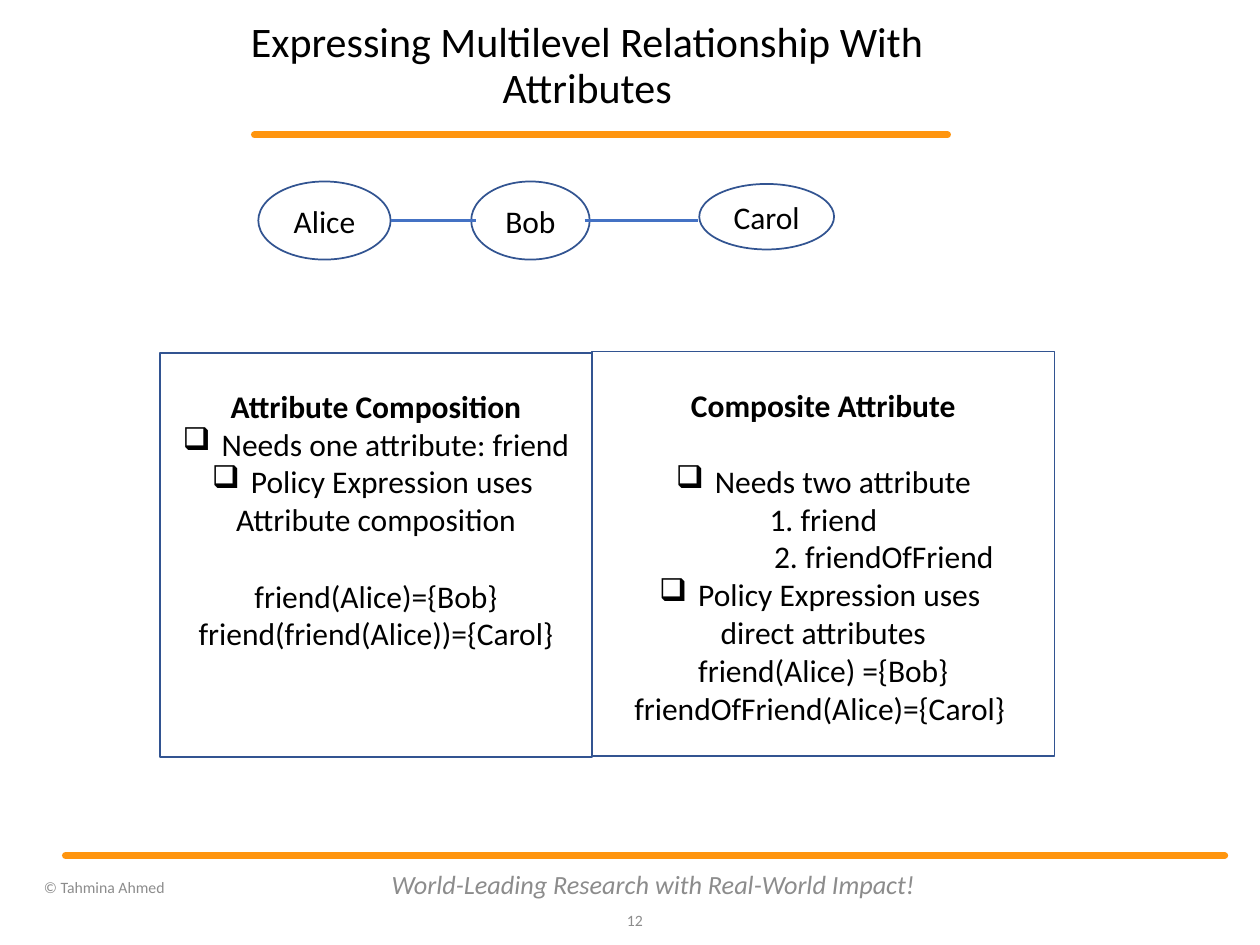
from dataclasses import dataclass
from typing import NamedTuple

from lxml.etree import SubElement
from pptx import Presentation
from pptx.dml.color import RGBColor
from pptx.enum.shapes import MSO_CONNECTOR as Connector, MSO_SHAPE as Shape
from pptx.enum.text import MSO_ANCHOR as Anchor, PP_ALIGN as Align
from pptx.oxml.ns import qn
from pptx.util import Emu, Pt

EMU_PER_PX = 9144


def px(length: int) -> Emu:
    return Emu(length * EMU_PER_PX)


@dataclass(frozen=True)
class Theme:
    font: str = "Calibri"
    ink: str = "000000"
    muted: str = "8C8C8C"
    paper: str = "FFFFFF"
    outline: str = "325491"
    link: str = "4472C4"
    rule: str = "FF950E"
    title_size: int = 24
    body_size: int = 18
    slogan_size: int = 15
    small_size: int = 9
    blank_line: int = 22


THEME = Theme()


class Area(NamedTuple):
    left: int
    top: int
    width: int
    height: int


class Line(NamedTuple):
    start: int
    end: int
    y: int


@dataclass(frozen=True)
class Entry:
    text: str
    bold: bool = False
    bullet: bool = False
    gap: bool = False
    indent: int = 0


@dataclass(frozen=True)
class Panel:
    area: Area
    entries: tuple[Entry, ...]


@dataclass(frozen=True)
class Label:
    text: str
    area: Area
    size: int
    color: str
    align: Align
    anchor: Anchor = Anchor.MIDDLE
    italic: bool = False
    spacing: float = 1.0


RULES = (Line(202, 752, 107), Line(52, 972, 679))
LINKS = (Line(310, 378, 175), Line(464, 554, 175))
PEOPLE = {
    "Alice": Area(205, 144, 105, 62),
    "Bob": Area(374, 144, 94, 62),
    "Carol": Area(555, 146, 107, 52),
}
PANELS = (
    Panel(Area(127, 280, 343, 321), (
        Entry("Attribute Composition", bold=True),
        Entry("Needs one attribute: friend", bullet=True),
        Entry("Policy Expression uses ", bullet=True),
        Entry("Attribute composition"),
        Entry("friend(Alice)={Bob}", gap=True),
        Entry("friend(friend(Alice))={Carol}"),
    )),
    Panel(Area(470, 279, 367, 321), (
        Entry("Composite Attribute", bold=True),
        Entry("Needs two attribute", bullet=True, gap=True),
        Entry("1. friend"),
        Entry("2. friendOfFriend", indent=96),
        Entry("Policy Expression uses ", bullet=True),
        Entry("direct attributes"),
        Entry("friend(Alice) ={Bob}"),
        Entry("friendOfFriend(Alice)={Carol} "),
    )),
)
FOOTERS = (
    Label("World-Leading Research with Real-World Impact!", Area(300, 682, 437, 40),
          THEME.slogan_size, THEME.muted, Align.CENTER, italic=True),
    Label("© Tahmina Ahmed", Area(25, 686, 275, 36),
          THEME.small_size, THEME.muted, Align.LEFT),
    Label("12", Area(480, 710, 40, 40), THEME.small_size, THEME.muted, Align.RIGHT),
)
TITLE = Label("Expressing Multilevel Relationship With Attributes", Area(183, 25, 566, 69),
              THEME.title_size, THEME.ink, Align.CENTER, Anchor.BOTTOM, spacing=0.9)


def add_span(para, text: str, size: int, color: str, bold=False, italic=False) -> None:
    span = para.add_run()
    span.text = text
    span.font.name = THEME.font
    span.font.size = Pt(size)
    span.font.bold = bold
    span.font.italic = italic
    span.font.color.rgb = RGBColor.from_string(color)


def add_line(page, line: Line, color: str, width: float, cap: str = "flat") -> None:
    connector = page.shapes.add_connector(
        Connector.STRAIGHT, px(line.start), px(line.y), px(line.end), px(line.y))
    connector.line.color.rgb = RGBColor.from_string(color)
    connector.line.width = Pt(width)
    connector.line._get_or_add_ln().set("cap", cap)
    SubElement(connector._element.spPr, qn("a:effectLst"))


def add_label(page, label: Label) -> None:
    frame = page.shapes.add_textbox(*map(px, label.area)).text_frame
    frame.word_wrap = True
    frame.vertical_anchor = label.anchor
    para = frame.paragraphs[0]
    para.alignment = label.align
    para.line_spacing = label.spacing
    add_span(para, label.text, label.size, label.color, italic=label.italic)


def add_outlined(page, kind: Shape, area: Area):
    shape = page.shapes.add_shape(kind, *map(px, area))
    shape.shadow.inherit = False
    shape.line.color.rgb = RGBColor.from_string(THEME.outline)
    shape.line.width = Pt(1)
    shape.text_frame.word_wrap = True
    return shape


def add_person(page, name: str, area: Area) -> None:
    oval = add_outlined(page, Shape.OVAL, area)
    oval.fill.background()
    oval.text_frame.vertical_anchor = Anchor.MIDDLE
    para = oval.text_frame.paragraphs[0]
    para.alignment = Align.CENTER
    add_span(para, name, THEME.body_size, THEME.ink)


def add_panel(page, panel: Panel) -> None:
    box = add_outlined(page, Shape.RECTANGLE, panel.area)
    box.fill.solid()
    box.fill.fore_color.rgb = RGBColor.from_string(THEME.paper)
    frame = box.text_frame
    frame.vertical_anchor = Anchor.TOP
    frame.margin_top = px(27)
    for index, entry in enumerate(panel.entries):
        para = frame.add_paragraph() if index else frame.paragraphs[0]
        para.alignment = Align.CENTER
        properties = para._p.get_or_add_pPr()
        if entry.bullet:
            properties.set("marL", str(px(31)))
            properties.set("indent", str(-px(31)))
            SubElement(properties, qn("a:buChar"), char="❑")
        elif entry.indent:
            properties.set("marL", str(px(entry.indent)))
        if entry.gap:
            para.space_before = Pt(THEME.blank_line)
        add_span(para, entry.text, THEME.body_size, THEME.ink, bold=entry.bold)


def main() -> None:
    deck = Presentation()
    deck.slide_width, deck.slide_height = px(1000), px(750)
    page = deck.slides.add_slide(deck.slide_layouts[6])
    for rule in RULES:
        add_line(page, rule, THEME.rule, 4, "rnd")
    for name, area in PEOPLE.items():
        add_person(page, name, area)
    for panel in PANELS:
        add_panel(page, panel)
    for link in LINKS:
        add_line(page, link, THEME.link, 1.5)
    for label in (TITLE, *FOOTERS):
        add_label(page, label)
    deck.save("out.pptx")


if __name__ == "__main__":
    main()
